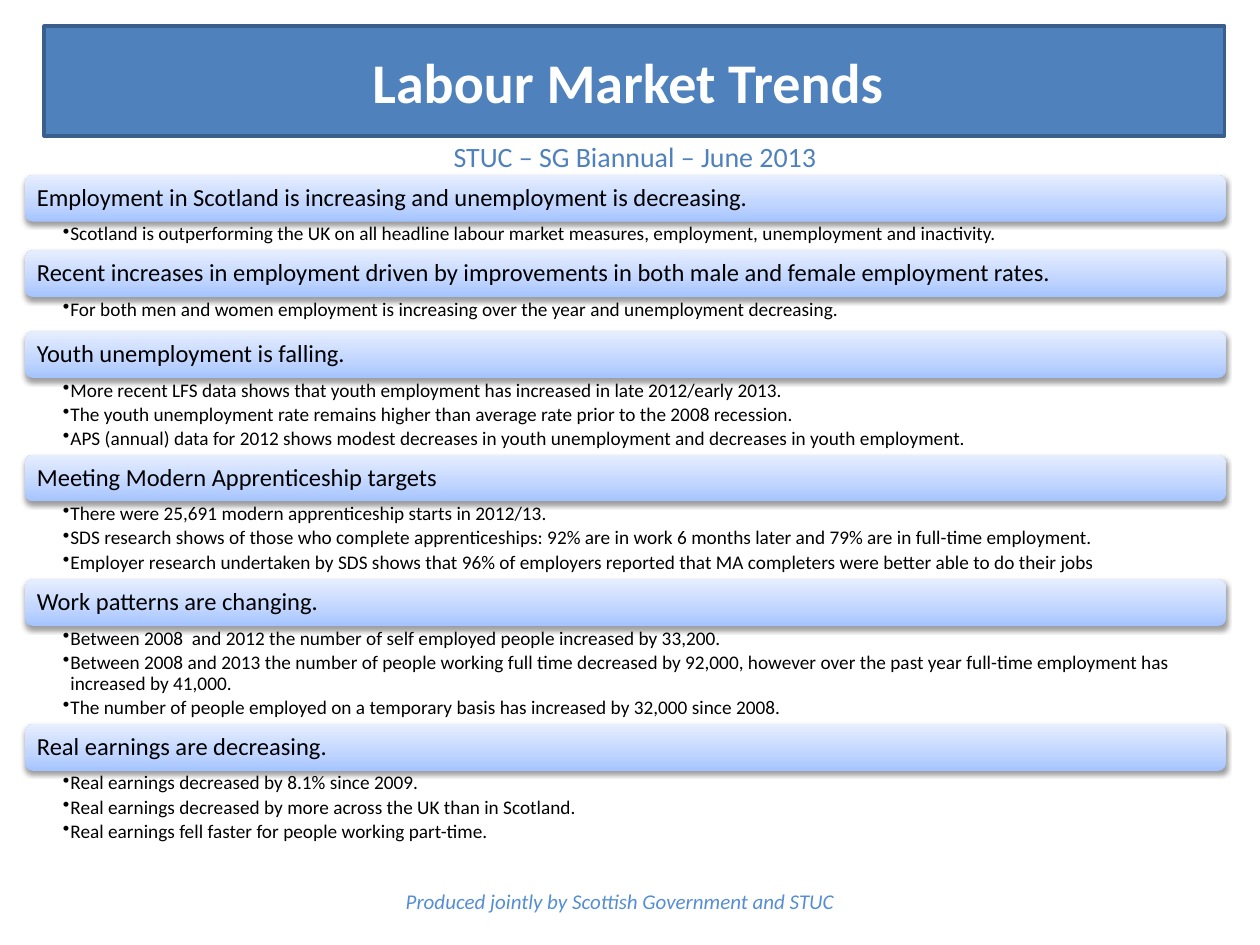
from lxml import etree
from pptx import Presentation
from pptx.dml.color import RGBColor
from pptx.enum import shapes, text
from pptx.oxml.ns import qn
from pptx.util import Cm, Pt

FONT = "Calibri"
HEADING_HEIGHT = 0.94
GRADIENT = [(0, "A4C4FF"), (35, "BFD4FF"), (100, "E6EEFF")]
CENTRE, LEFT = text.PP_ALIGN.CENTER, text.PP_ALIGN.LEFT
MIDDLE, TOP = text.MSO_ANCHOR.MIDDLE, text.MSO_ANCHOR.TOP

# Heading, height of the bullet area in cm, bullets
TOPICS = [
    ("Employment in Scotland is increasing and unemployment is decreasing.", 0.58, [
        "Scotland is outperforming the UK on all headline labour market measures, "
        "employment, unemployment and inactivity."]),
    ("Recent increases in employment driven by improvements in both male and female "
     "employment rates.", 0.69, [
        "For both men and women employment is increasing over the year and "
        "unemployment decreasing."]),
    ("Youth unemployment is falling.", 1.55, [
        "More recent LFS data shows that youth employment has increased in late "
        "2012/early 2013.",
        "The youth unemployment rate remains higher than average rate prior to the "
        "2008 recession.",
        "APS (annual) data for 2012 shows modest decreases in youth unemployment and "
        "decreases in youth employment."]),
    ("Meeting Modern Apprenticeship targets", 1.57, [
        "There were 25,691 modern apprenticeship starts in 2012/13.",
        "SDS research shows of those who complete apprenticeships: 92% are in work 6 "
        "months later and 79% are in full-time employment.",
        "Employer research undertaken by SDS shows that 96% of employers reported "
        "that MA completers were better able to do their jobs"]),
    ("Work patterns are changing.", 1.98, [
        "Between 2008  and 2012 the number of self employed people increased by 33,200.",
        "Between 2008 and 2013 the number of people working full time decreased by "
        "92,000, however over the past year full-time employment has increased by 41,000.",
        "The number of people employed on a temporary basis has increased by 32,000 "
        "since 2008."]),
    ("Real earnings are decreasing.", 2.16, [
        "Real earnings decreased by 8.1% since 2009.",
        "Real earnings decreased by more across the UK than in Scotland.",
        "Real earnings fell faster for people working part-time."]),
]


def colour(hex_value):
    return RGBColor.from_string(hex_value)


def apply(target, values):
    for name, value in values.items():
        setattr(target, name, value)


def write(holder, lines, size, hex_value, align=LEFT, anchor=MIDDLE,
          margins=(0.25, 0.13, 0.25, 0.13), spacing=None, **font):
    """Fill a shape or text box with one paragraph for each line."""
    frame = holder.text_frame
    sides = ("margin_left", "margin_top", "margin_right", "margin_bottom")
    apply(frame, {"word_wrap": True, "vertical_anchor": anchor,
                  **{side: Cm(gap) for side, gap in zip(sides, margins)}})
    for index, line in enumerate(lines):
        paragraph = frame.paragraphs[0] if index == 0 else frame.add_paragraph()
        apply(paragraph, {"alignment": align, **(spacing or {})})
        run = paragraph.add_run()
        run.text = line
        apply(run.font, {"name": FONT, "size": Pt(size), **font})
        run.font.color.rgb = colour(hex_value)
    return frame


def add_box(slide, box, preset=None):
    place = [Cm(length) for length in box]
    if preset is None:
        return slide.shapes.add_textbox(*place)
    shape = slide.shapes.add_shape(preset, *place)
    shape.shadow.inherit = False
    return shape


def add_colour(parent, hex_value):
    return etree.SubElement(parent, qn("a:srgbClr"), val=hex_value)


def shade(bar):
    """Give a heading bar its three-stop gradient and soft shadow."""
    bar.line.fill.background()
    bar.fill.gradient()
    bar.fill.gradient_angle = 90
    properties = bar._element.spPr
    stops = properties.find(qn("a:gradFill")).find(qn("a:gsLst"))
    for stop in list(stops):
        stops.remove(stop)
    for position, hex_value in GRADIENT:
        add_colour(etree.SubElement(stops, qn("a:gs"), pos=str(position * 1000)), hex_value)
    shadow = etree.SubElement(properties.find(qn("a:effectLst")), qn("a:outerShdw"),
                              blurRad=str(Pt(3.1)), dist=str(Pt(1.6)),
                              dir="5400000", rotWithShape="0")
    etree.SubElement(add_colour(shadow, "000000"), qn("a:alpha"), val="38000")


def add_bullets(frame):
    for paragraph in frame.paragraphs:
        properties = paragraph._p.get_or_add_pPr()
        apply_indent = {"marL": Cm(0.15), "indent": -Cm(0.15)}
        for name, value in apply_indent.items():
            properties.set(name, str(value))
        etree.SubElement(properties, qn("a:buChar"), char="•")


def add_banner(slide, box):
    banner = add_box(slide, box, shapes.MSO_SHAPE.RECTANGLE)
    banner.fill.solid()
    banner.fill.fore_color.rgb = colour("4F81BD")
    banner.line.color.rgb = colour("3A5F8C")
    banner.line.width = Pt(2)
    write(banner, ["Labour Market Trends "], 32, "FFFFFF", CENTRE, bold=True)


def add_topic(slide, box, heading, bullets):
    left, top, width, height = box
    # Heading bar
    bar = add_box(slide, (left, top, width, HEADING_HEIGHT),
                  shapes.MSO_SHAPE.ROUNDED_RECTANGLE)
    shade(bar)
    write(bar, [heading], 14, "000000", margins=(0.19, 0.15, 0.19, 0.15),
          spacing={"line_spacing": 0.9})
    # Bullets below the bar
    details = add_box(slide, (left, top + HEADING_HEIGHT, width, height - HEADING_HEIGHT))
    add_bullets(write(details, bullets, 11, "000000", anchor=TOP,
                      margins=(0.76, 0.05, 0.28, 0.05),
                      spacing={"line_spacing": 0.9, "space_after": Pt(2)}))


def add_topics(slide, box):
    left, top, width = box
    for heading, details_height, bullets in TOPICS:
        height = HEADING_HEIGHT + details_height
        add_topic(slide, (left, top, width, height), heading, bullets)
        top += height


def main():
    deck = Presentation()
    apply(deck, {"slide_width": Cm(25.4), "slide_height": Cm(19.05)})
    slide = deck.slides.add_slide(deck.slide_layouts[6])
    # Subtitle
    write(add_box(slide, (1.37, 1.57, 22.86, 3.18)),
          ["STUC – SG Biannual – June 2013"], 16, "4F81BD", CENTRE)
    add_topics(slide, (0.51, 3.53, 24.2))
    add_banner(slide, (0.89, 0.53, 23.8, 2.21))
    # Footer
    write(add_box(slide, (1.5, 17.65, 22, 1.02)),
          ["Produced jointly by Scottish Government and STUC"], 12, "558ED5", CENTRE,
          italic=True)
    deck.save("out.pptx")


if __name__ == "__main__":
    main()
